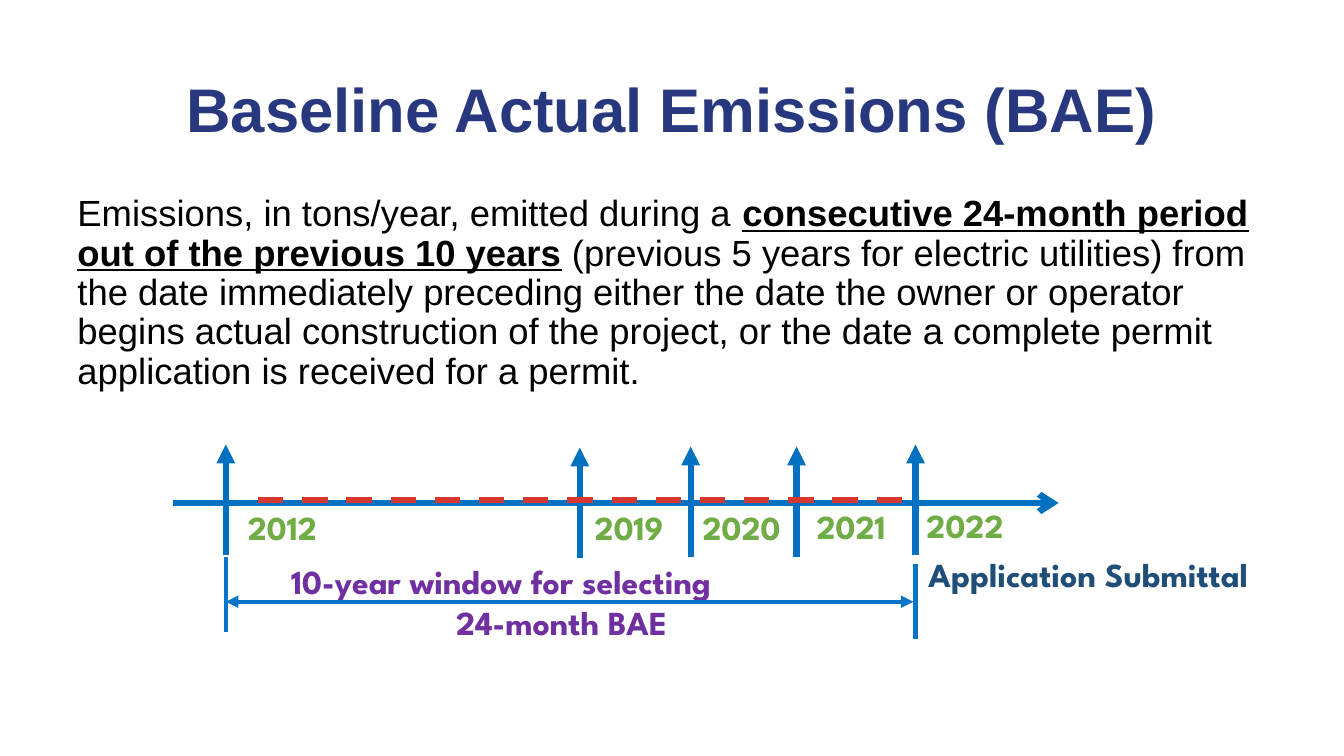
from lxml import etree
from pptx import Presentation
from pptx.dml.color import RGBColor
from pptx.enum.dml import MSO_LINE
from pptx.enum.shapes import MSO_CONNECTOR
from pptx.enum.text import MSO_ANCHOR, MSO_AUTO_SIZE, PP_ALIGN
from pptx.oxml.ns import qn
from pptx.util import Inches, Pt

STRAIGHT = MSO_CONNECTOR.STRAIGHT
DASH = MSO_LINE.DASH
TOP = MSO_ANCHOR.TOP
FIXED = MSO_AUTO_SIZE.NONE
GROW = MSO_AUTO_SIZE.SHAPE_TO_FIT_TEXT
LEFT = PP_ALIGN.LEFT
CENTER = PP_ALIGN.CENTER

AXIS_BLUE = "0070C0"
SPAN_BLUE = "0875C8"
YEAR_GREEN = "70AD47"
WINDOW_PURPLE = "7030A0"


def add_line(start, end, color, width, head=None, tail=None):
    line = page.shapes.add_connector(STRAIGHT, *[Inches(n) for n in start + end])
    line.line.color.rgb = RGBColor.from_string(color)
    line.line.width = Pt(width)
    outline = line.line._get_or_add_ln()
    for tag, kind in (("a:headEnd", head), ("a:tailEnd", tail)):
        if kind:
            etree.SubElement(outline, qn(tag), type=kind)
    etree.SubElement(line._element.spPr, qn("a:effectLst"))
    return line


def write_text(box, area, paragraphs, size, font, color, fit):
    box.left, box.top, box.width, box.height = [Inches(n) for n in area]
    frame = box.text_frame
    frame.word_wrap = True
    frame.auto_size = fit
    frame.vertical_anchor = TOP
    for index, (align, spans) in enumerate(paragraphs):
        para = frame.add_paragraph() if index else frame.paragraphs[0]
        para.alignment = align
        for text, bold, underline in spans:
            span = para.add_run()
            span.text = text
            span.font.name = font
            span.font.size = Pt(size)
            span.font.bold = bold
            span.font.underline = underline
            span.font.color.rgb = RGBColor.from_string(color)
    return frame


deck = Presentation()
deck.slide_width = Inches(13.33)
deck.slide_height = Inches(7.5)
page = deck.slides.add_slide(deck.slide_layouts[5])

title = write_text(
    page.shapes.title, (0.67, 0.74, 11.99, 1.45),
    [(CENTER, [("Baseline Actual Emissions (BAE)", True, False)])],
    44, "Arial", "27387E", FIXED)
title.paragraphs[0].line_spacing = 0.9

definition = write_text(
    page.shapes.add_textbox(0, 0, 0, 0), (0.67, 1.89, 11.99, 1.37),
    [(LEFT, [
        ("Emissions, in tons/year, emitted during a ", False, False),
        ("consecutive 24-month period out of the previous 10 years", True, True),
        (" (previous 5 years for electric utilities) from the date immediately "
         "preceding either the date the owner or operator begins actual "
         "construction of the project, or the date a complete permit "
         "application is received for a permit.", False, False),
    ])],
    26, "Arial", "000000", FIXED)
definition.paragraphs[0].line_spacing = 0.9

add_line((1.72, 4.99), (10.5, 4.99), AXIS_BLUE, 4.5, tail="arrow")

years = [
    ("2012", 2.24, 5.51, 2.36, 4.98),
    ("2019", 5.75, 5.54, 5.8, 4.98),
    ("2020", 6.85, 5.53, 6.87, 4.98),
    ("2021", 7.9, 5.53, 8, 4.97),
    ("2022", 9.08, 5.51, 9.09, 4.96),
]
for year, tick, base, left, top in years:
    add_line((tick, base), (tick, base - 1.1), AXIS_BLUE, 4.5, tail="triangle")
    write_text(page.shapes.add_textbox(0, 0, 0, 0), (left, top, 1.05, 0.5),
               [(LEFT, [(year, True, False)])],
               24, "League Spartan", YEAR_GREEN, GROW)

window = add_line((2.56, 4.96), (9.11, 4.96), "D63731", 4.5)
window.line.dash_style = DASH

for edge, top in ((2.24, 5.53), (9.08, 5.6)):
    add_line((edge, top), (edge, top + 0.74), SPAN_BLUE, 3)

write_text(page.shapes.add_textbox(0, 0, 0, 0), (2.79, 5.52, 5.56, 0.91),
           [(LEFT, [("10-year window for selecting", True, False)]),
            (CENTER, [("24-month BAE", True, False)])],
           24, "League Spartan", WINDOW_PURPLE, GROW)
write_text(page.shapes.add_textbox(0, 0, 0, 0), (9.11, 5.45, 3.98, 0.5),
           [(LEFT, [("Application Submittal", True, False)])],
           24, "League Spartan", "1F4E79", GROW)
add_line((2.24, 5.97), (9.06, 5.97), SPAN_BLUE, 3, head="triangle", tail="triangle")

deck.save("out.pptx")
